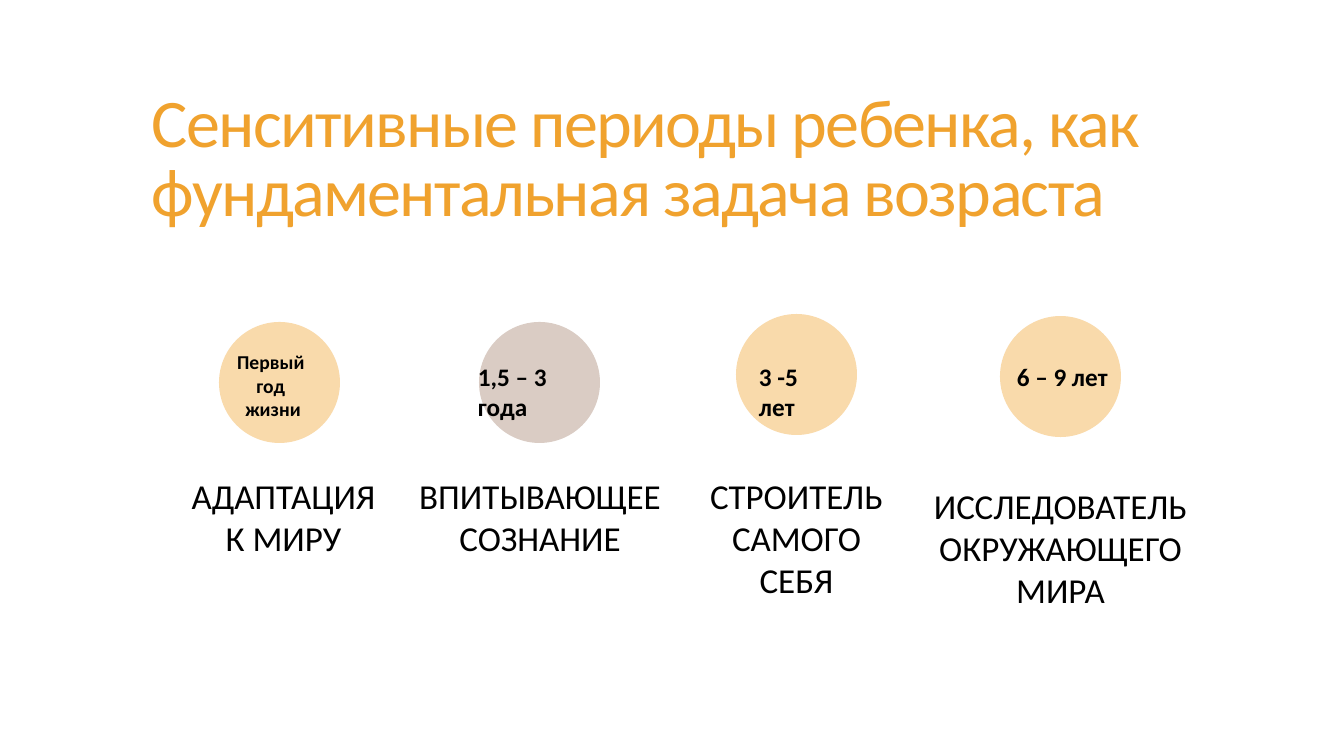
from pptx import Presentation
from pptx.dml.color import RGBColor
from pptx.enum.shapes import MSO_SHAPE
from pptx.enum.text import MSO_ANCHOR, PP_ALIGN
from pptx.util import Pt

PX = 914400 / 100.8
COLORS = {"title": "F0A22E", "sand": "F9DAAB", "taupe": "DACCC4", "text": "000000"}


def px(*values):
    return [round(v * PX) for v in values]


def add_text(box, lines, size, color="text", bold=False, align=PP_ALIGN.LEFT, inset=None):
    tf = s.shapes.add_textbox(*px(*box)).text_frame
    tf.word_wrap = True
    if inset is not None:
        tf.margin_left = tf.margin_right = tf.margin_top = tf.margin_bottom = inset
    tf.text = lines
    for p in tf.paragraphs:
        p.alignment = align
        for r in p.runs:
            r.font.name = "Calibri"
            r.font.size = Pt(size)
            r.font.bold = bold
            r.font.color.rgb = RGBColor.from_string(COLORS[color])
    return tf


prs = Presentation()
prs.slide_width, prs.slide_height = px(1344, 756)
s = prs.slides.add_slide(prs.slide_layouts[6])

tf = add_text((142, 89, 1058, 144),
              "Сенситивные периоды ребенка, как фундаментальная задача возраста", 48.6, "title")
tf.vertical_anchor = MSO_ANCHOR.MIDDLE
p = tf.paragraphs[0]
p.line_spacing = 0.85
p.runs[0].font._element.set("spc", "-120")

periods = [
    ((219, 322), "sand", (184, 475, 199, 76), "АДАПТАЦИЯ К МИРУ"),
    ((479, 322), "taupe", (418, 475, 244, 76), "ВПИТЫВАЮЩЕЕ СОЗНАНИЕ"),
    ((736, 314), "sand", (697, 475, 199, 76), "СТРОИТЕЛЬ САМОГО СЕБЯ"),
    ((1000, 316), "sand", (929, 485, 263, 62), "ИССЛЕДОВАТЕЛЬ ОКРУЖАЮЩЕГО МИРА"),
]
for corner, fill, box, task in periods:
    sp = s.shapes.add_shape(MSO_SHAPE.OVAL, *px(*corner, 121, 121))
    sp.shadow.inherit = False
    sp.fill.solid()
    sp.fill.fore_color.rgb = RGBColor.from_string(COLORS[fill])
    sp.line.fill.background()
    add_text(box, task, 25, align=PP_ALIGN.CENTER, inset=0)

ages = [
    ((195, 345, 156, 82), "Первый \nгод \nжизни", 14, PP_ALIGN.CENTER),
    ((468, 356, 136, 72), "1,5 – 3 года", 18, PP_ALIGN.LEFT),
    ((749, 356, 94, 72), "3 -5 лет", 18, PP_ALIGN.LEFT),
    ((1007, 356, 120, 40), "6 – 9 лет", 18, PP_ALIGN.LEFT),
]
for box, age, size, align in ages:
    add_text(box, age, size, bold=True, align=align)

prs.save("out.pptx")
